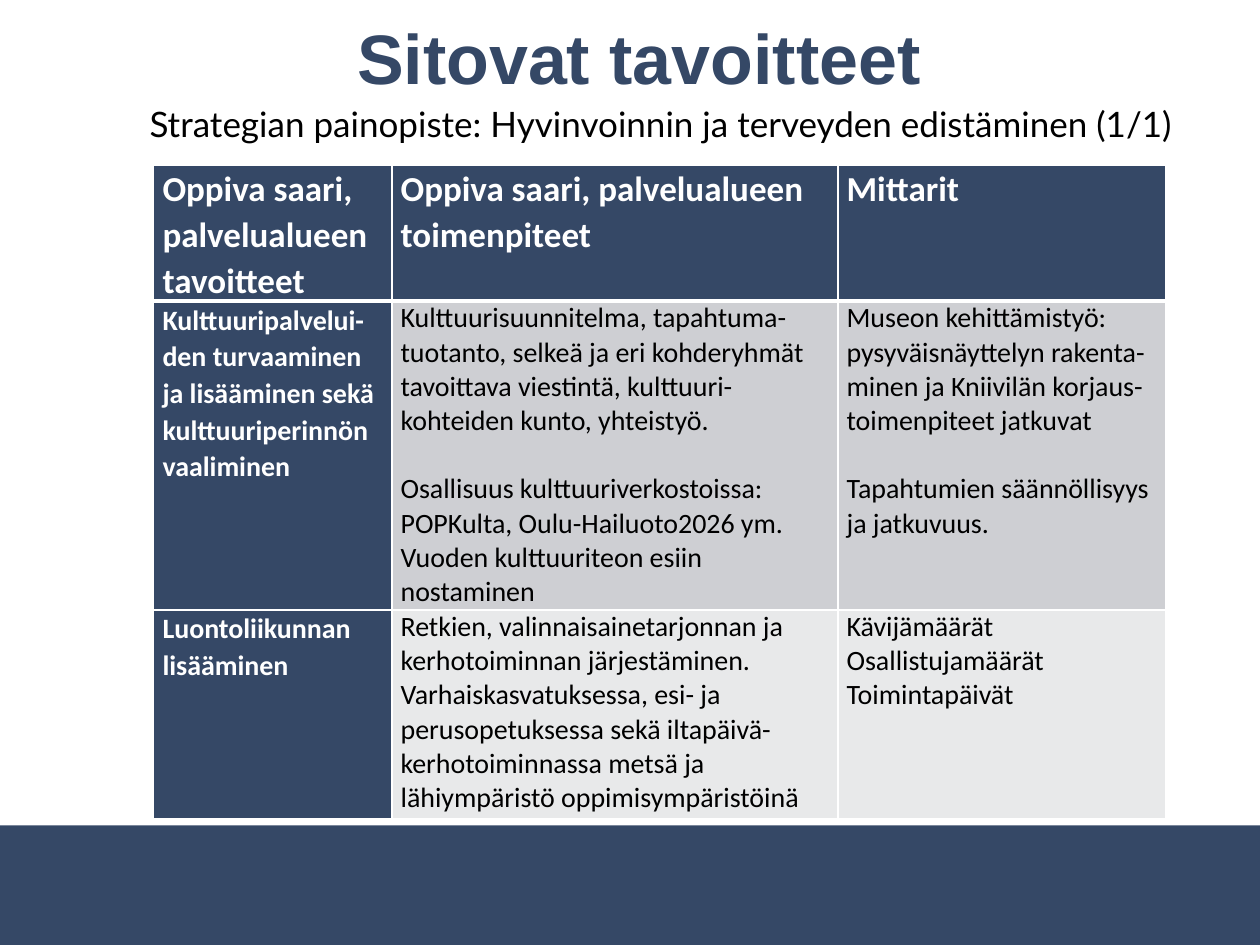
"""Build the slide of binding goals: title, subtitle, goal table and bottom bar."""
from pptx import Presentation
from pptx.dml.color import RGBColor
from pptx.enum.shapes import MSO_SHAPE
from pptx.enum.text import MSO_ANCHOR, PP_ALIGN
from pptx.oxml import parse_xml
from pptx.oxml.ns import nsdecls
from pptx.util import Inches, Pt

RECT = MSO_SHAPE.RECTANGLE
MIDDLE = MSO_ANCHOR.MIDDLE
CENTER = PP_ALIGN.CENTER

COLORS = {"navy": "354866", "white": "FFFFFF", "black": "000000",
          "band1": "CECFD3", "band2": "E8E9EA"}
FORMATS = {
    "title": {"name": "Arial", "size": Pt(40), "bold": True, "color": "navy"},
    "subtitle": {"name": "Lato", "size": Pt(20), "bold": False, "color": "black"},
    "header": {"name": "Calibri", "size": Pt(20), "bold": True, "color": "white"},
    "goal": {"name": "Calibri", "size": Pt(16), "bold": True, "color": "white"},
    "body": {"name": "Calibri", "size": Pt(16), "bold": False, "color": "black"},
}
COL_WIDTHS = [1.89, 3.54, 2.6]
ROW_HEIGHTS = [1.08, 2.45, 1.66]
ROWS = [
    [["Oppiva saari, palvelualueen tavoitteet"],
     ["Oppiva saari, palvelualueen toimenpiteet"],
     ["Mittarit"]],
    [["Kulttuuripalvelui-den turvaaminen ja lisääminen sekä kulttuuriperinnön vaaliminen"],
     ["Kulttuurisuunnitelma, tapahtuma-tuotanto, selkeä ja eri kohderyhmät tavoittava "
      "viestintä, kulttuuri-kohteiden kunto, yhteistyö.",
      "Osallisuus kulttuuriverkostoissa: POPKulta, Oulu-Hailuoto2026 ym.",
      "Vuoden kulttuuriteon esiin nostaminen"],
     ["Museon kehittämistyö: pysyväisnäyttelyn rakenta-minen ja Kniivilän "
      "korjaus-toimenpiteet jatkuvat",
      "Tapahtumien säännöllisyys ja jatkuvuus."]],
    [["Luontoliikunnan lisääminen"],
     ["Retkien, valinnaisainetarjonnan ja kerhotoiminnan järjestäminen.",
      "Varhaiskasvatuksessa, esi- ja perusopetuksessa sekä iltapäivä-kerhotoiminnassa "
      "metsä ja lähiympäristö oppimisympäristöinä"],
     ["Kävijämäärät", "Osallistujamäärät", "Toimintapäivät"]],
]


def write(p, text, style):
    r = p.add_run()
    r.text = text
    for key, value in FORMATS[style].items():
        if key == "color":
            r.font.color.rgb = RGBColor.from_string(COLORS[value])
        else:
            setattr(r.font, key, value)


def add_border(cell, side, width):
    cell._tc.get_or_add_tcPr().append(parse_xml(
        f'<a:ln{side} {nsdecls("a")} w="{Pt(width)}"><a:solidFill>'
        f'<a:srgbClr val="{COLORS["white"]}"/></a:solidFill></a:ln{side}>'))


prs = Presentation()
prs.slide_width, prs.slide_height = Inches(10), Inches(7.5)
s = prs.slides.add_slide(prs.slide_layouts[5])

bar_top = Inches(6.55)
bar = s.shapes.add_shape(RECT, 0, bar_top, prs.slide_width, prs.slide_height - bar_top)
bar.shadow.inherit = False
bar.fill.solid()
bar.fill.fore_color.rgb = RGBColor.from_string(COLORS["navy"])
bar.line.fill.background()

title = s.shapes.title
title.left, title.top, title.width, title.height = map(Inches, (0.57, -0.18, 9, 1.25))
subtitle = s.shapes.add_textbox(*map(Inches, (0.02, 0.76, 9.45, 0.44)))
for sp, style, text in [
    (title, "title", "Sitovat tavoitteet"),
    (subtitle, "subtitle",
     "Strategian painopiste: Hyvinvoinnin ja terveyden edistäminen (1/1)"),
]:
    tf = sp.text_frame
    tf.word_wrap = True
    tf.vertical_anchor = MIDDLE
    p = tf.paragraphs[0]
    p.alignment = CENTER
    write(p, text, style)
subtitle.text_frame.paragraphs[0]._p.get_or_add_pPr().set("marL", str(Inches(1)))

table = s.shapes.add_table(len(ROWS), len(COL_WIDTHS), Inches(1.22), Inches(1.31),
                           Inches(sum(COL_WIDTHS)), Inches(sum(ROW_HEIGHTS))).table
for col, width in zip(table.columns, COL_WIDTHS):
    col.width = Inches(width)
for row, height in zip(table.rows, ROW_HEIGHTS):
    row.height = Inches(height)

for i, row in enumerate(ROWS):
    for j, paragraphs in enumerate(row):
        cell = table.cell(i, j)
        style = "header" if i == 0 else "goal" if j == 0 else "body"
        cell.margin_left = cell.margin_right = Inches(0.07)
        cell.margin_top = cell.margin_bottom = 0
        for side in "LRTB":
            add_border(cell, side, 3 if (i, side) in [(0, "B"), (1, "T")] else 1)
        cell.fill.solid()
        fill = f"band{i}" if style == "body" else "navy"
        cell.fill.fore_color.rgb = RGBColor.from_string(COLORS[fill])
        tf = cell.text_frame
        for k, text in enumerate(paragraphs):
            p = tf.add_paragraph() if k else tf.paragraphs[0]
            if style != "body":
                p.line_spacing, p.space_after = 1.07, Pt(8)
            elif (i, k) == (1, 1):
                p.space_before = Pt(19.5)
            write(p, text, style)

prs.save("out.pptx")
